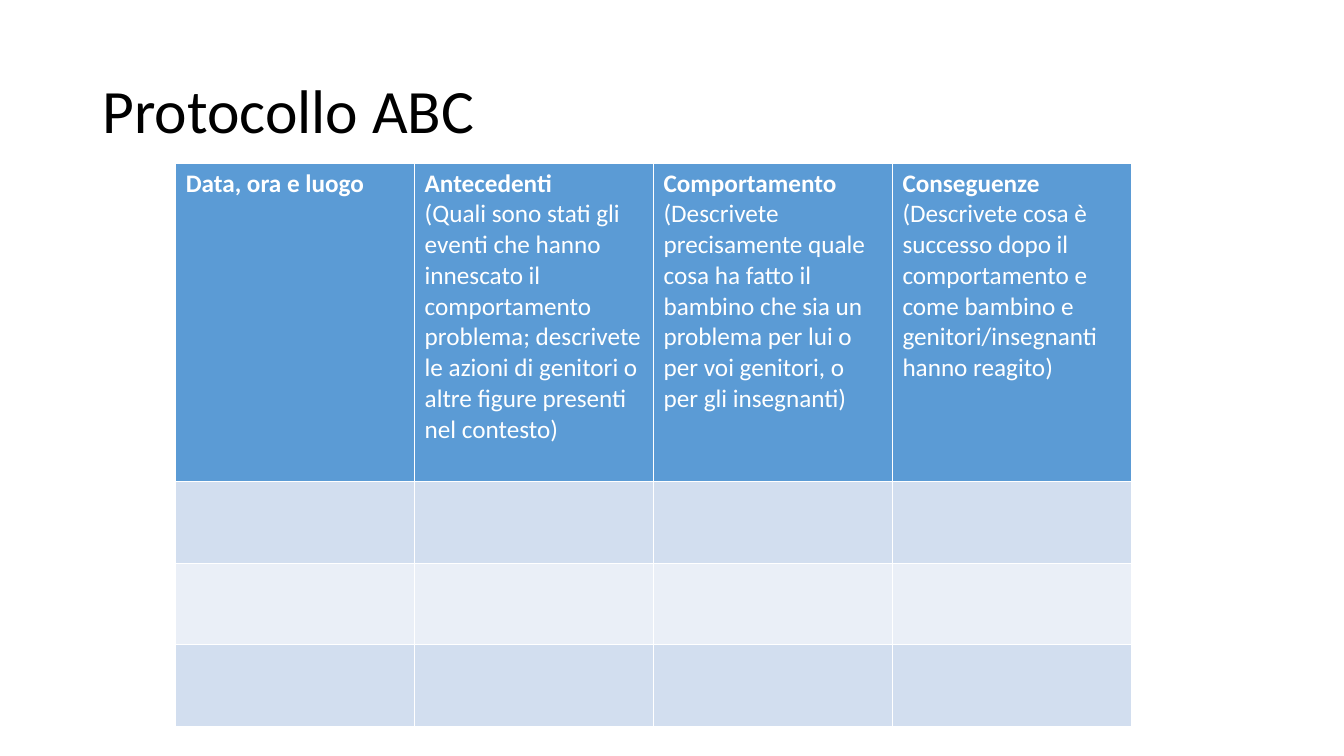
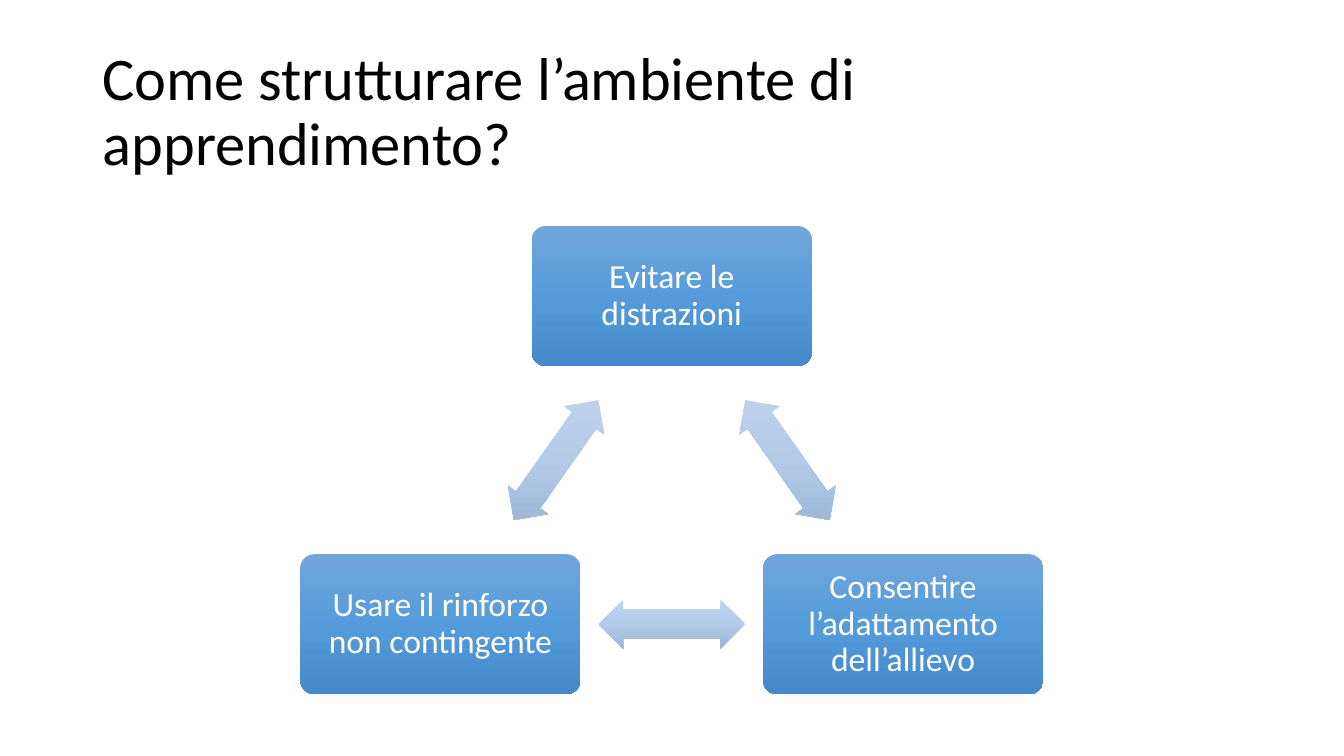
from dataclasses import dataclass
from math import atan2, degrees

from lxml import etree
from pptx import Presentation
from pptx.dml.color import RGBColor
from pptx.enum.shapes import MSO_SHAPE
from pptx.enum.text import MSO_ANCHOR, MSO_AUTO_SIZE, PP_ALIGN
from pptx.oxml.ns import qn
from pptx.util import Cm, Pt

BOX, ARROW = MSO_SHAPE.ROUNDED_RECTANGLE, MSO_SHAPE.LEFT_RIGHT_ARROW
MIDDLE, FIXED = MSO_ANCHOR.MIDDLE, MSO_AUTO_SIZE.NONE
LEFT, CENTER = PP_ALIGN.LEFT, PP_ALIGN.CENTER


@dataclass(frozen=True)
class Theme:
    """Colours, font and type sizes of the deck."""
    font: str = "Calibri"
    ink: str = "000000"
    white: str = "FFFFFF"
    head: str = "5B9BD5"
    bands: tuple = ("D2DEEF", "EAEFF7")
    node: tuple = ("71A6DB", "559BDB", "448ACA")
    link: tuple = ("C0D2EB", "B3CBE9", "9BB4D3")
    title: float = 44
    tight: float = 43.2
    label: float = 24
    cell: float = 18


def put(item, values):
    """Set each value of a dict as an attribute."""
    for name, value in values.items():
        setattr(item, name, value)


class Deck:
    """Holds the theme and the current slide."""

    def __init__(self, theme):
        """Start an empty wide deck."""
        self.theme = theme
        self.file = Presentation()
        put(self.file, {"slide_width": Cm(33.87), "slide_height": Cm(19.05)})

    def label(self, para, text, size, color, bold=False):
        """Add a styled run to a paragraph."""
        run = para.add_run()
        run.text = text
        put(run.font, {"name": self.theme.font, "size": Pt(size), "bold": bold})
        run.font.color.rgb = RGBColor.from_string(color)

    def slide(self, text, size):
        """Open a slide with a title."""
        self.page = self.file.slides.add_slide(self.file.slide_layouts[5])
        title = self.page.shapes.title
        put(title, {"left": Cm(2.33), "top": Cm(1.01),
                    "width": Cm(29.21), "height": Cm(3.68)})
        put(title.text_frame, {"vertical_anchor": MIDDLE, "auto_size": FIXED,
                               "word_wrap": True})
        para = title.text_frame.paragraphs[0]
        put(para, {"alignment": LEFT, "line_spacing": 0.9})
        self.label(para, text, size, self.theme.ink)

    def table(self, heads, left, top, width, heights):
        """Add a table with a text header and empty banded rows."""
        look = self.theme
        grid = self.page.shapes.add_table(
            len(heights), len(heads), Cm(left), Cm(top),
            Cm(width * len(heads)), Cm(sum(heights))).table
        for column in grid.columns:
            column.width = Cm(width)
        for index, height in enumerate(heights):
            grid.rows[index].height = Cm(height)
            color = look.bands[(index - 1) % 2] if index else look.head
            for cell in grid.rows[index].cells:
                cell.fill.solid()
                cell.fill.fore_color.rgb = RGBColor.from_string(color)
        for cell, (name, hint) in zip(grid.rows[0].cells, heads):
            frame = cell.text_frame
            self.label(frame.paragraphs[0], name, look.cell, look.white, True)
            if hint:
                self.label(frame.add_paragraph(), hint, look.cell, look.white)

    def shape(self, kind, center, size, colors, adjust):
        """Add a preset shape around a centre, shaded from top to bottom."""
        (x, y), (width, height) = center, size
        item = self.page.shapes.add_shape(
            kind, Cm(x - width / 2), Cm(y - height / 2), Cm(width), Cm(height))
        item.shadow.inherit = False
        item.line.fill.background()
        for index, value in enumerate(adjust):
            item.adjustments[index] = value
        item.fill.gradient()
        grad = item.element.spPr.find(qn("a:gradFill"))
        grad.clear()
        grad.set("rotWithShape", "0")
        stops = etree.SubElement(grad, qn("a:gsLst"))
        for index, color in enumerate(colors):
            stop = etree.SubElement(stops, qn("a:gs"), pos=str(index * 50000))
            etree.SubElement(stop, qn("a:srgbClr"), val=color)
        etree.SubElement(grad, qn("a:lin"), ang="5400000", scaled="0")
        return item

    def node(self, text, center):
        """Add a labelled rounded box."""
        look = self.theme
        item = self.shape(BOX, center, (7.06, 3.53), look.node, [0.1])
        edges = ("left", "top", "right", "bottom")
        put(item.text_frame, {f"margin_{edge}": Cm(0.25) for edge in edges})
        put(item.text_frame, {"word_wrap": True, "vertical_anchor": MIDDLE})
        para = item.text_frame.paragraphs[0]
        put(para, {"alignment": CENTER, "line_spacing": 0.9})
        self.label(para, text, look.label, look.white)

    def link(self, start, end):
        """Add a double arrow halfway between two centres."""
        (ax, ay), (bx, by) = start, end
        item = self.shape(ARROW, ((ax + bx) / 2, (ay + by) / 2), (3.69, 1.24),
                          self.theme.link, [0.6, 0.5])
        item.rotation = degrees(atan2(by - ay, bx - ax))


def main():
    """Build and save the deck."""
    theme = Theme()
    deck = Deck(theme)

    deck.slide("Protocollo ABC", theme.title)
    deck.table([
        ("Data, ora e luogo", ""),
        ("Antecedenti", "(Quali sono stati gli eventi che hanno innescato il "
         "comportamento problema; descrivete le azioni di genitori o altre "
         "figure presenti nel contesto)"),
        ("Comportamento", "(Descrivete precisamente quale cosa ha fatto il "
         "bambino che sia un problema per lui o per voi genitori, o per gli "
         "insegnanti)"),
        ("Conseguenze", "(Descrivete cosa è successo dopo il comportamento e "
         "come bambino e genitori/insegnanti hanno reagito)"),
    ], 4.43, 4.11, 6.02, [8.02] + [2.06] * 3)

    deck.slide("Come strutturare l’ambiente di apprendimento?", theme.tight)
    middle, reach, high, low = 16.93, 5.83, 7.46, 15.73
    peak, right, left = (middle, high), (middle + reach, low), (middle - reach, low)
    deck.node("Evitare le distrazioni", peak)
    deck.node("Consentire l’adattamento dell’allievo", right)
    deck.node("Usare il rinforzo non contingente", left)
    for start, end in ((peak, right), (left, right), (left, peak)):
        deck.link(start, end)

    deck.file.save("out.pptx")


if __name__ == "__main__":
    main()
